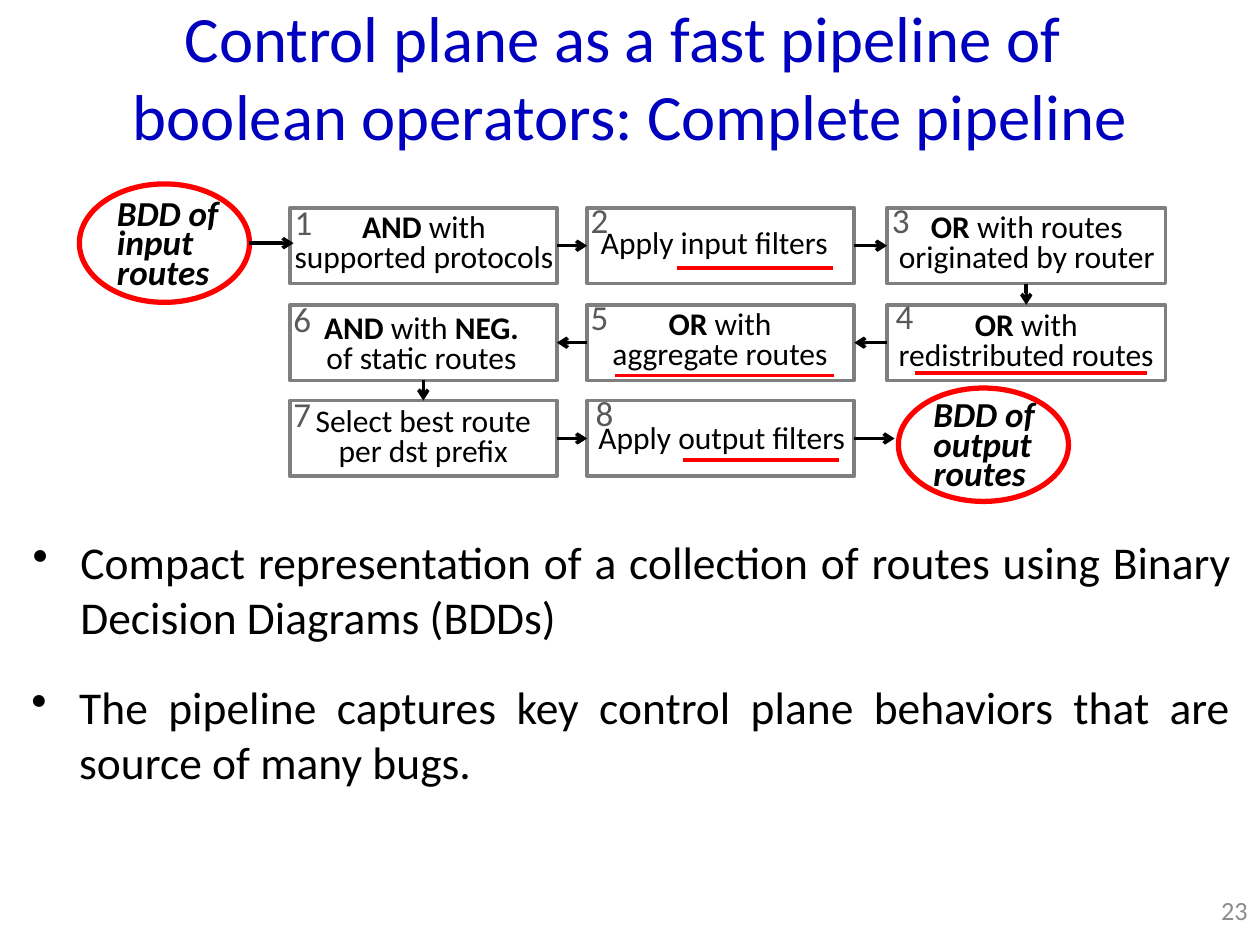
from pptx import Presentation
from pptx import util as u
from pptx.dml.color import RGBColor
from pptx.enum import shapes, text
from pptx.oxml.ns import qn
from lxml import etree

# Grid: ten columns across and 7.5 rows down, so cells are square
prs = Presentation()
prs.slide_width, prs.slide_height = u.Inches(10), u.Inches(7.5)
CELL = prs.slide_width / 10
LEFT, CENTER = text.PP_ALIGN.LEFT, text.PP_ALIGN.CENTER
TOP, MIDDLE = text.MSO_ANCHOR.TOP, text.MSO_ANCHOR.MIDDLE
SIDES = {"top": 0, "left": 1, "bottom": 2, "right": 3}

# Pipeline grid: column (left, width), row tops
COLS = [(2.3, 2.12), (4.66, 2.12), (7.04, 2.21)]
ROWS = [1.65, 2.42, 3.18]
ROW_H = 0.6

# Column, row, number offset, label offset and width, label ("*" marks bold)
STEPS = [
    (0, 0, (-0.06, -0.02), (-0.13, 0, 2.39), ["*AND* with", "supported protocols"]),
    (1, 0, (-0.07, -0.03), (-0.07, 0.13, 2.16), ["Apply input filters"]),
    (2, 0, (-0.06, -0.03), (-0.04, 0, 2.3), ["*OR* with routes originated by router"]),
    (2, 1, (-0.03, -0.04), (-0.05, 0.01, 2.31), ["*OR* with redistributed routes"]),
    (1, 1, (-0.07, -0.03), (-0.1, 0, 2.31), ["*OR* with", "aggregate routes"]),
    (0, 1, (-0.07, -0.02), (-0.15, 0.03, 2.39), ["*AND* with *NEG.*", "of static routes"]),
    (0, 2, (-0.07, -0.02), (-0.09, 0.01, 2.3), ["Select best route", "per dst prefix"]),
    (1, 2, (-0.03, -0.03), (-0.06, 0.15, 2.26), ["Apply output filters"]),
]
# Sides joined between each step and the next
LINKS = [("right", "left"), ("right", "left"), ("bottom", "top"), ("left", "right"),
         ("left", "right"), ("bottom", "top"), ("right", "left")]
# Left, right, y
UNDERLINES = [(5.37, 6.61, 2.13), (4.88, 6.62, 2.98), (7.26, 9.1, 2.96), (5.42, 6.66, 3.65)]


def grid(*values):
    return [round(v * CELL) for v in values]


def color(hex_string):
    return RGBColor.from_string(hex_string)


def add_text(s, box, lines, size, ink="000000", align=LEFT, spacing=None,
             anchor=TOP, bold=None, italic=None, grow=False):
    tf = s.shapes.add_textbox(*grid(*box)).text_frame
    tf.word_wrap = True
    tf.vertical_anchor = anchor
    if grow:
        tf.auto_size = text.MSO_AUTO_SIZE.SHAPE_TO_FIT_TEXT
    for i, line in enumerate(lines):
        p = tf.add_paragraph() if i else tf.paragraphs[0]
        p.alignment = align
        if spacing:
            p.line_spacing = spacing
        p.font.name, p.font.size = "Calibri", u.Pt(size)
        p.font.bold, p.font.italic = bold, italic
        p.font.color.rgb = color(ink)
        for j, part in enumerate(line.split("*")):
            if part:
                r = p.add_run()
                r.text = part
                if j % 2:
                    r.font.bold = True
    return tf


def add_outline(s, kind, box, ink, width, fill=None):
    sp = s.shapes.add_shape(kind, *grid(*box))
    sp.shadow.inherit = False
    if fill:
        sp.fill.solid()
        sp.fill.fore_color.rgb = color(fill)
    else:
        sp.fill.background()
    sp.line.color.rgb = color(ink)
    sp.line.width = u.Pt(width)
    return sp


def add_line(s, start, end, ink="000000", width=2, arrow=True):
    c = s.shapes.add_connector(shapes.MSO_CONNECTOR.STRAIGHT, *grid(*start, *end))
    c.line.color.rgb = color(ink)
    c.line.width = u.Pt(width)
    if arrow:
        etree.SubElement(c.line._get_or_add_ln(), qn("a:tailEnd"), type="arrow")
    etree.SubElement(c._element.spPr, qn("a:effectLst"))
    return c


def add_step(s, box, number, number_at, label_at, label):
    x, y, w, h = box
    sp = add_outline(s, shapes.MSO_SHAPE.RECTANGLE, box, "7F7F7F", 2, "FFFFFF")
    dx, dy, label_w = label_at
    label_h = h if dy < 0.1 else 0.35
    add_text(s, (x + dx, y + dy, label_w, label_h), label, 18,
             align=CENTER, spacing=0.8, grow=True)
    dx, dy = number_at
    add_text(s, (x + dx, y + dy, 0.36, 0.35), [str(number)], 20, "595959",
             spacing=0.7, grow=True)
    return sp


def add_terminal(s, box, text_at, word):
    x, y, w, h = box
    dx, dy = text_at
    add_text(s, (x + dx, y + dy, 1.11, 0.82), ["BDD of", word, "routes"], 20,
             spacing=0.7, bold=True, italic=True, grow=True)
    add_outline(s, shapes.MSO_SHAPE.OVAL, box, "FF0000", 3)


def add_pipeline(s):
    # Numbered steps
    steps = []
    for n, (col, row, number_at, label_at, label) in enumerate(STEPS, 1):
        x, w = COLS[col]
        steps.append(add_step(s, (x, ROWS[row], w, ROW_H), n, number_at, label_at, label))

    # Arrows from step to step
    for a, b, (out, into) in zip(steps, steps[1:], LINKS):
        c = add_line(s, (0, 0), (1, 1))
        c.begin_connect(a, SIDES[out])
        c.end_connect(b, SIDES[into])

    # Input and output ends
    add_terminal(s, (0.63, 1.46, 1.35, 0.94), (0.2, 0.1), "input")
    add_terminal(s, (7.13, 3.08, 1.35, 0.9), (0.18, 0.08), "output")
    add_line(s, (1.98, 1.93), (2.33, 1.93))
    last_y = ROWS[2] + ROW_H / 2
    c = add_line(s, (6.78, last_y), (7.1, last_y))
    c.begin_connect(steps[-1], SIDES["right"])

    # Red underlines
    for left, right, y in UNDERLINES:
        add_line(s, (left, y), (right, y), "FF0000", 2.25, arrow=False)


def add_bullet(s, box, line):
    p = add_text(s, box, [line], 26, align=text.PP_ALIGN.JUSTIFY).paragraphs[0]
    p.space_before = u.Pt(5)
    pPr = p._p.get_or_add_pPr()
    indent = grid(0.38)[0]
    pPr.set("marL", str(indent))
    pPr.set("indent", str(-indent))
    bullet = etree.Element(qn("a:buChar"), char="•")
    pPr.find(qn("a:defRPr")).addprevious(bullet)


def main():
    s = prs.slides.add_slide(prs.slide_layouts[6])
    # Page number
    add_text(s, (9.3, 6.95, 0.7, 0.55), ["23"], 15, "8C8C8C",
             align=text.PP_ALIGN.RIGHT, anchor=MIDDLE)
    add_pipeline(s)
    # Title
    add_text(s, (-0.92, 0.03, 11.84, 1.14),
             ["Control plane as a fast pipeline of ", "boolean operators: Complete pipeline"],
             37, "0000BF", align=CENTER, anchor=MIDDLE)
    # Takeaways
    add_bullet(s, (0.16, 4.19, 9.72, 0.98),
               "Compact representation of a collection of routes using Binary Decision Diagrams (BDDs)")
    add_bullet(s, (0.15, 5.34, 9.72, 0.98),
               "The pipeline captures key control plane behaviors that are source of many bugs.")
    prs.save("out.pptx")


if __name__ == "__main__":
    main()
